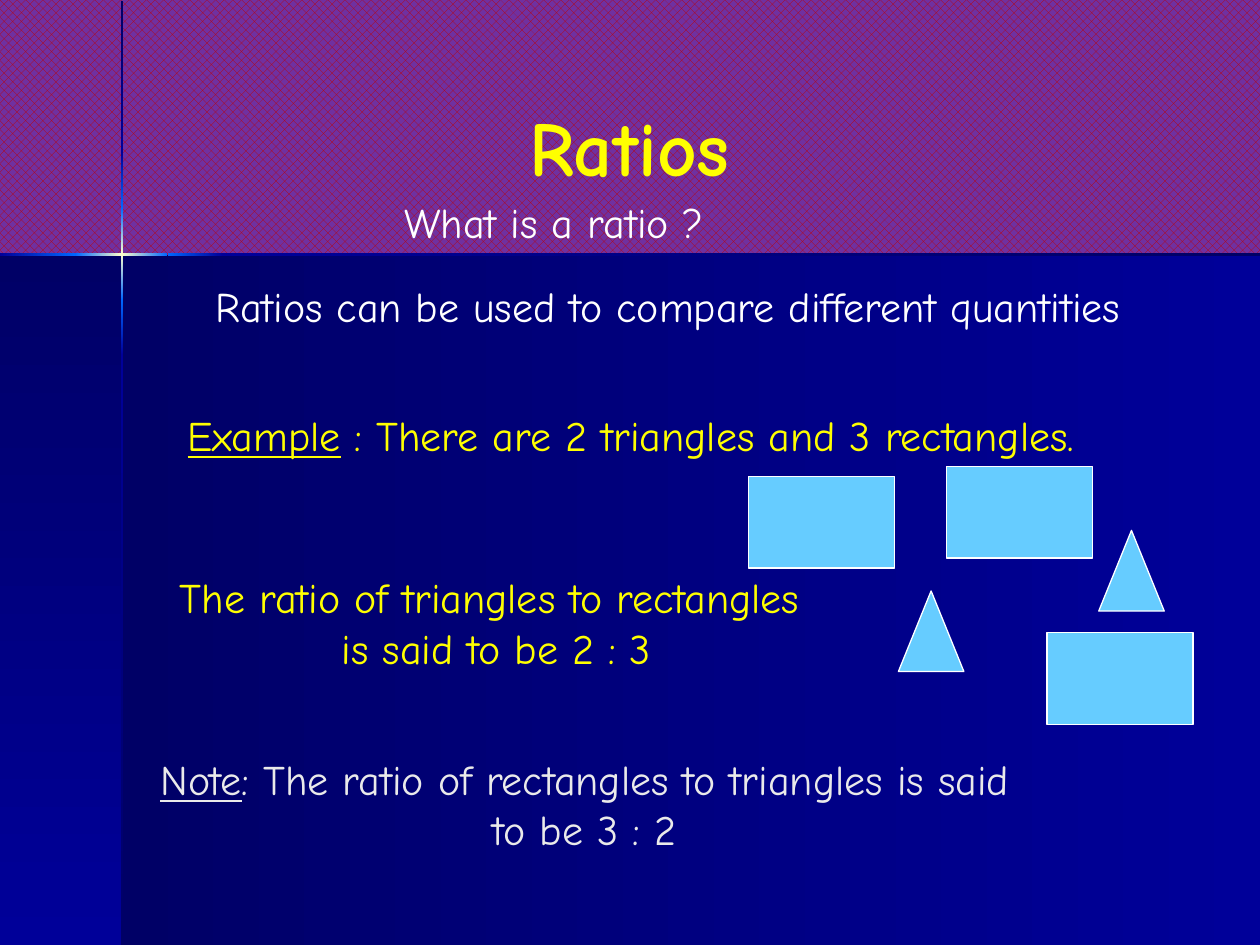
from copy import deepcopy
from pptx import Presentation
from pptx.dml.color import RGBColor
from pptx.enum.dml import MSO_PATTERN
from pptx.enum.shapes import MSO_SHAPE
from pptx.enum.text import MSO_ANCHOR, MSO_AUTO_SIZE, PP_ALIGN
from pptx.oxml.ns import qn
from pptx.util import Inches, Pt

COLS, ROWS = 100, 75
WIDE, HIGH = Inches(10), Inches(7.5)
FONT = "Comic Neue"
HUES = {
    "dark": "000066", "navy": "000099", "blue": "0066FF", "glow": "FFFFCC",
    "red": "C00000", "plum": "7030A0", "sky": "66CCFF",
    "gold": "FFFF00", "white": "FFFFFF", "pale": "EAEAEA",
}


def hue(name):
    """Return the named colour."""
    return RGBColor.from_string(HUES[name])


def place(box):
    """Turn a box in columns and rows into slide lengths."""
    x, y, w, h = box
    return (round(x * WIDE / COLS), round(y * HIGH / ROWS),
            round(w * WIDE / COLS), round(h * HIGH / ROWS))


def blend(slide, box, names, down=False):
    """Draw a bar with an even gradient through the named colours."""
    bar = slide.shapes.add_shape(MSO_SHAPE.RECTANGLE, *place(box))
    bar.shadow.inherit = False
    bar.line.fill.background()
    bar.fill.gradient()
    bar.fill.gradient_angle = 270 if down else 0
    stops = next(bar._element.spPr.iter(qn("a:gsLst")))
    for _ in names[2:]:
        stops.append(deepcopy(stops[-1]))
    for i, (stop, name) in enumerate(zip(bar.fill.gradient_stops, names)):
        stop.position = i / (len(names) - 1)
        stop.color.rgb = hue(name)


def write(slide, box, lines, size=24, color="white", bold=False,
          align=PP_ALIGN.CENTER, wrap=False, anchor=MSO_ANCHOR.TOP, grow=True):
    """Write lines of text, each a list of runs, underlining runs marked by a tuple."""
    frame = slide.shapes.add_textbox(*place(box)).text_frame
    frame.word_wrap = wrap
    frame.vertical_anchor = anchor
    frame.auto_size = MSO_AUTO_SIZE.SHAPE_TO_FIT_TEXT if grow else MSO_AUTO_SIZE.NONE
    for i, line in enumerate(lines):
        para = frame.add_paragraph() if i else frame.paragraphs[0]
        para.alignment = align
        for part in line:
            run = para.add_run()
            under = isinstance(part, tuple)
            run.text = part[0] if under else part
            font = run.font
            font.name, font.size, font.bold = FONT, Pt(size), bold
            font.underline = under
            font.color.rgb = hue(color)


def panels(slide, box, split):
    """Draw the side and main panels, parted at the given column."""
    x, y, w, h = box
    blend(slide, (x + split, y, w - split, h), ["dark", "navy"])
    blend(slide, (x, y, split, h), ["dark", "navy"], down=True)


def beam(slide, box, cuts, down=False):
    """Draw a beam of light along the box, cut at the given distances."""
    x, y, w, h = box
    tones = [["dark", "navy"], ["navy", "blue"], ["blue", "glow", "blue"],
             ["blue", "navy"], ["navy", "dark"]]
    for start, end, names in zip(cuts, cuts[1:], tones[-(len(cuts) - 1):] if down
                                 else tones[1:]):
        part = (x, y + start, w, end - start) if down else (x + start, y, end - start, h)
        blend(slide, part, names, down)


def figures(slide, box):
    """Scatter the triangles and rectangles in the box."""
    x, y, _, _ = box
    kinds = [
        (MSO_SHAPE.ISOSCELES_TRIANGLE, 5.2, 6.4, [(11.9, 9.9), (27.8, 5.1)]),
        (MSO_SHAPE.RECTANGLE, 11.6, 7.3, [(0, 0.8), (15.7, 0), (23.7, 13.2)]),
    ]
    for kind, w, h, spots in kinds:
        for dx, dy in spots:
            item = slide.shapes.add_shape(kind, *place((x + dx, y + dy, w, h)))
            item.shadow.inherit = False
            item.fill.solid()
            item.fill.fore_color.rgb = hue("sky")
            item.line.color.rgb = hue("white")
            item.line.width = Pt(0.75)


def heading(slide, box):
    """Write the title with the opening question below it."""
    x, y, w, _ = box
    write(slide, (x, y, w, 7.6), [["Ratios"]], size=44, color="gold", bold=True,
          wrap=True, anchor=MSO_ANCHOR.BOTTOM, grow=False)
    write(slide, (x + 9.9, y + 7, 28.2, 5), [["What is a ratio ?"]],
          align=PP_ALIGN.LEFT)


def lesson(slide, box):
    """Write the statement, example, answer and note down the box."""
    x, y, _, _ = box
    write(slide, (x + 2.2, y, 81.2, 5),
          [["Ratios can be used to compare different quantities"]])
    write(slide, (x + 3.7, y + 10.2, 78.6, 5),
          [[("Example",), " : There are 2 triangles and 3 rectangles."]],
          color="gold", align=PP_ALIGN.LEFT)
    write(slide, (x, y + 23.1, 57.3, 9),
          [["The ratio of triangles to rectangles"], [" is said to be 2 : 3"]],
          color="gold")
    write(slide, (x + 1.3, y + 37.5, 69.8, 9),
          [[("Note",), ": The ratio of rectangles to triangles is said to be 3 : 2"]],
          color="pale", wrap=True)


def main():
    """Build and save the slide."""
    deck = Presentation()
    deck.slide_width, deck.slide_height = WIDE, HIGH
    slide = deck.slides.add_slide(deck.slide_layouts[6])
    back = slide.background.fill
    back.patterned()
    back.pattern = MSO_PATTERN.PERCENT_50
    back.fore_color.rgb, back.back_color.rgb = hue("red"), hue("plum")
    panels(slide, (0, 20.2, COLS, ROWS - 20.2), 9.7)
    beam(slide, (9.6, 0, 0.2, ROWS), [0.1, 12.1, 16.5, 23.8, 28.2, ROWS], down=True)
    beam(slide, (0, 20.1, COLS, 0.2), [0, 6, 13.3, 17.7, COLS])
    heading(slide, (21.2, 8.1, 57.5, 12))
    figures(slide, (59.4, 37, 35.3, 20.5))
    lesson(slide, (10.2, 21.8, 83.4, 46.5))
    deck.save("out.pptx")


if __name__ == "__main__":
    main()
